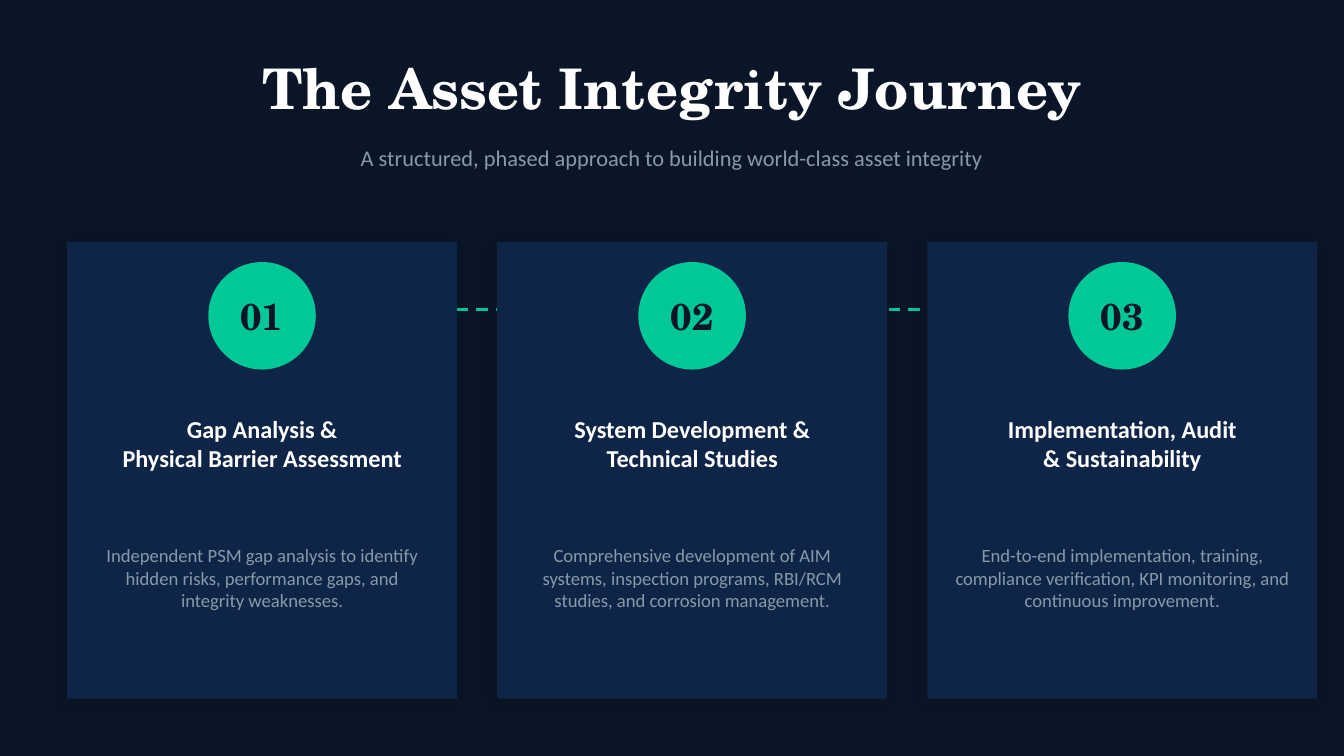
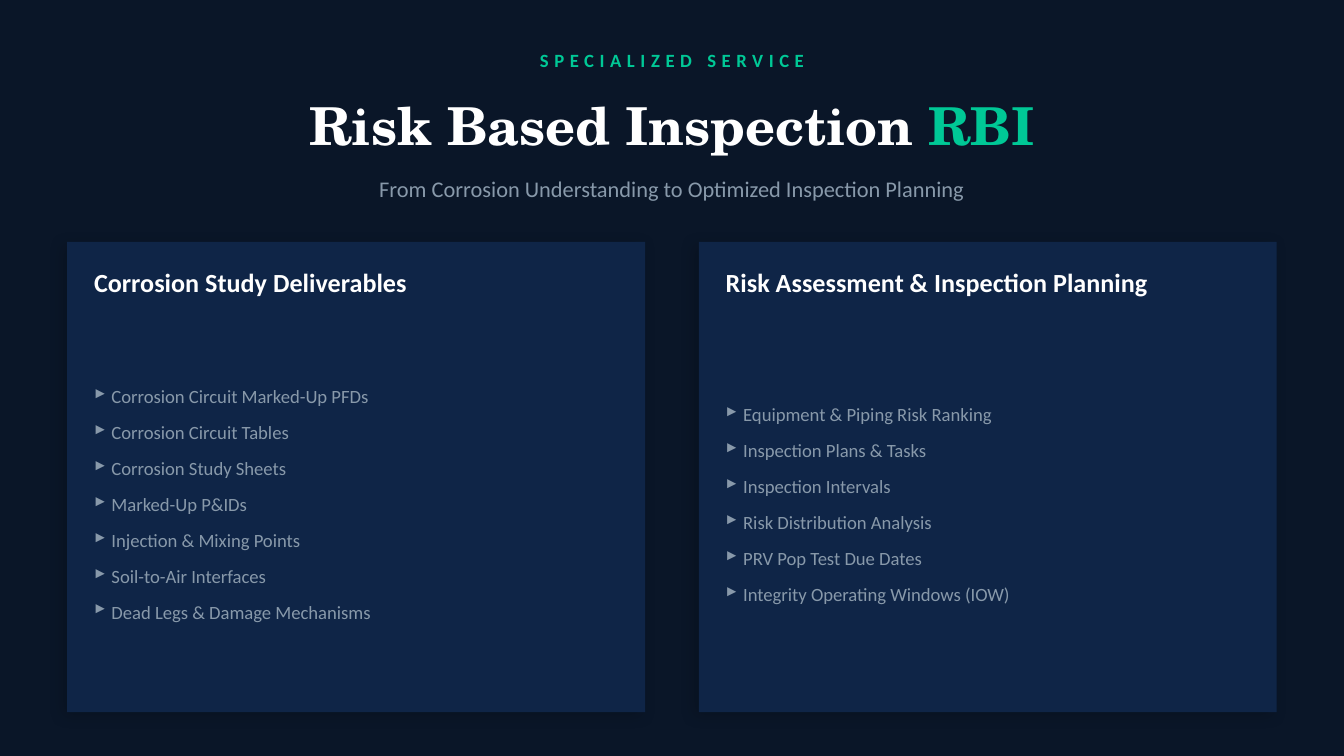
from lxml import etree
from pptx import Presentation, util as u
from pptx.dml.color import RGBColor
from pptx.enum import dml, shapes, text
from pptx.oxml import parse_xml
from pptx.oxml.ns import nsdecls, qn

NAVY, CARD, GREEN, WHITE, GREY = "0A1628", "0F2547", "00C896", "FFFFFF", "8899AA"
SERIF, SANS = "TeX Gyre Schola", "Calibri"
RECT, OVAL = shapes.MSO_SHAPE.RECTANGLE, shapes.MSO_SHAPE.OVAL
LEFT, CENTER = text.PP_ALIGN.LEFT, text.PP_ALIGN.CENTER
SHADOW = (
    f'<a:effectLst {nsdecls("a")}><a:outerShdw blurRad="101600" dist="38100" dir="8100000" '
    'algn="bl" rotWithShape="0"><a:srgbClr val="000000"><a:alpha val="18000"/></a:srgbClr>'
    '</a:outerShdw></a:effectLst>'
)

prs = Presentation()
prs.slide_width = u.Inches(10)
prs.slide_height = prs.slide_width * 9 // 16
UNIT = prs.slide_width // 100


def rgb(value):
    return RGBColor.from_string(value)


def put(s, cell, content="", size=10, color=GREY, bold=False, font=SANS,
        align=CENTER, kind=None, fill=None):
    x, y, w, h = [int(n * UNIT) for n in cell]
    if kind is None:
        sp = s.shapes.add_textbox(x, y, w, h)
    else:
        sp = s.shapes.add_shape(kind, x, y, w, h)
        sp.shadow.inherit = False
        sp.fill.solid()
        sp.fill.fore_color.rgb = rgb(fill)
        sp.line.fill.background()
    if kind == RECT:
        effects = sp._element.spPr.find(qn("a:effectLst"))
        effects.getparent().replace(effects, parse_xml(SHADOW))
    tf = sp.text_frame
    tf.word_wrap = True
    tf.vertical_anchor = text.MSO_ANCHOR.MIDDLE
    tf.margin_left = tf.margin_right = tf.margin_top = tf.margin_bottom = 0
    tf.text = content
    for p in tf.paragraphs:
        p.alignment = align
        for r in p.runs:
            r.font.size = u.Pt(size)
            r.font.name = font
            r.font.bold = bold
            r.font.color.rgb = rgb(color)
    return tf


for _ in range(2):
    s = prs.slides.add_slide(prs.slide_layouts[6])
    s.background.fill.solid()
    s.background.fill.fore_color.rgb = rgb(NAVY)
journey, rbi = prs.slides

put(journey, (5, 3, 90, 7), "The Asset Integrity Journey", 30, WHITE, True, SERIF)
put(journey, (5, 10, 90, 3.5),
    "A structured, phased approach to building world-class asset integrity", 12)

track = journey.shapes.add_connector(
    shapes.MSO_CONNECTOR.STRAIGHT, 15 * UNIT, 23 * UNIT, 85 * UNIT, 23 * UNIT)
track.line.color.rgb = rgb(GREEN)
track.line.width = u.Pt(1.5)
track.line.dash_style = dml.MSO_LINE.DASH
etree.SubElement(track._element.spPr, qn("a:effectLst"))

phases = [
    ("Gap Analysis &\nPhysical Barrier Assessment",
     "Independent PSM gap analysis to identify hidden risks, performance gaps, "
     "and integrity weaknesses."),
    ("System Development &\nTechnical Studies",
     "Comprehensive development of AIM systems, inspection programs, RBI/RCM studies, "
     "and corrosion management."),
    ("Implementation, Audit\n& Sustainability",
     "End-to-end implementation, training, compliance verification, KPI monitoring, "
     "and continuous improvement."),
]
for i, (name, summary) in enumerate(phases):
    x = 5 + 32 * i
    put(journey, (x, 18, 29, 34), kind=RECT, fill=CARD)
    put(journey, (x + 10.5, 19.5, 8, 8), f"{i + 1:02d}", 20, NAVY, True, SERIF,
        kind=OVAL, fill=GREEN)
    put(journey, (x + 2, 29, 25, 8), name, 13, WHITE, True)
    put(journey, (x + 2, 37, 25, 12), summary)

tf = put(rbi, (5, 3, 90, 3), "SPECIALIZED SERVICE", 10, GREEN, True)
tf.paragraphs[0].runs[0]._r.get_or_add_rPr().set("spc", "300")
tf = put(rbi, (5, 6, 90, 6.5), "Risk Based Inspection ", 28, WHITE, True, SERIF)
r = tf.paragraphs[0].add_run()
r.text = "RBI"
r.font.size, r.font.name, r.font.bold = u.Pt(28), SERIF, True
r.font.color.rgb = rgb(GREEN)
put(rbi, (5, 12.5, 90, 3),
    "From Corrosion Understanding to Optimized Inspection Planning", 12)

panels = [
    ("Corrosion Study Deliverables", [
        "Corrosion Circuit Marked-Up PFDs",
        "Corrosion Circuit Tables",
        "Corrosion Study Sheets",
        "Marked-Up P&IDs",
        "Injection & Mixing Points",
        "Soil-to-Air Interfaces",
        "Dead Legs & Damage Mechanisms",
    ]),
    ("Risk Assessment & Inspection Planning", [
        "Equipment & Piping Risk Ranking",
        "Inspection Plans & Tasks",
        "Inspection Intervals",
        "Risk Distribution Analysis",
        "PRV Pop Test Due Dates",
        "Integrity Operating Windows (IOW)",
    ]),
]
for i, (heading, items) in enumerate(panels):
    x = 5 + 47 * i
    put(rbi, (x, 18, 43, 35), kind=RECT, fill=CARD)
    put(rbi, (x + 2, 19, 39, 4), heading, 14, WHITE, True, align=LEFT)
    tf = put(rbi, (x + 2, 24, 39, 26), "\n".join(items), align=LEFT)
    for p in tf.paragraphs:
        pPr = p._p.get_or_add_pPr()
        indent = u.Inches(0.13)
        pPr.set("marL", str(indent))
        pPr.set("indent", str(-indent))
        etree.SubElement(pPr, qn("a:buChar")).set("char", "▸")
        p.line_spacing = 1.6

prs.save("out.pptx")
